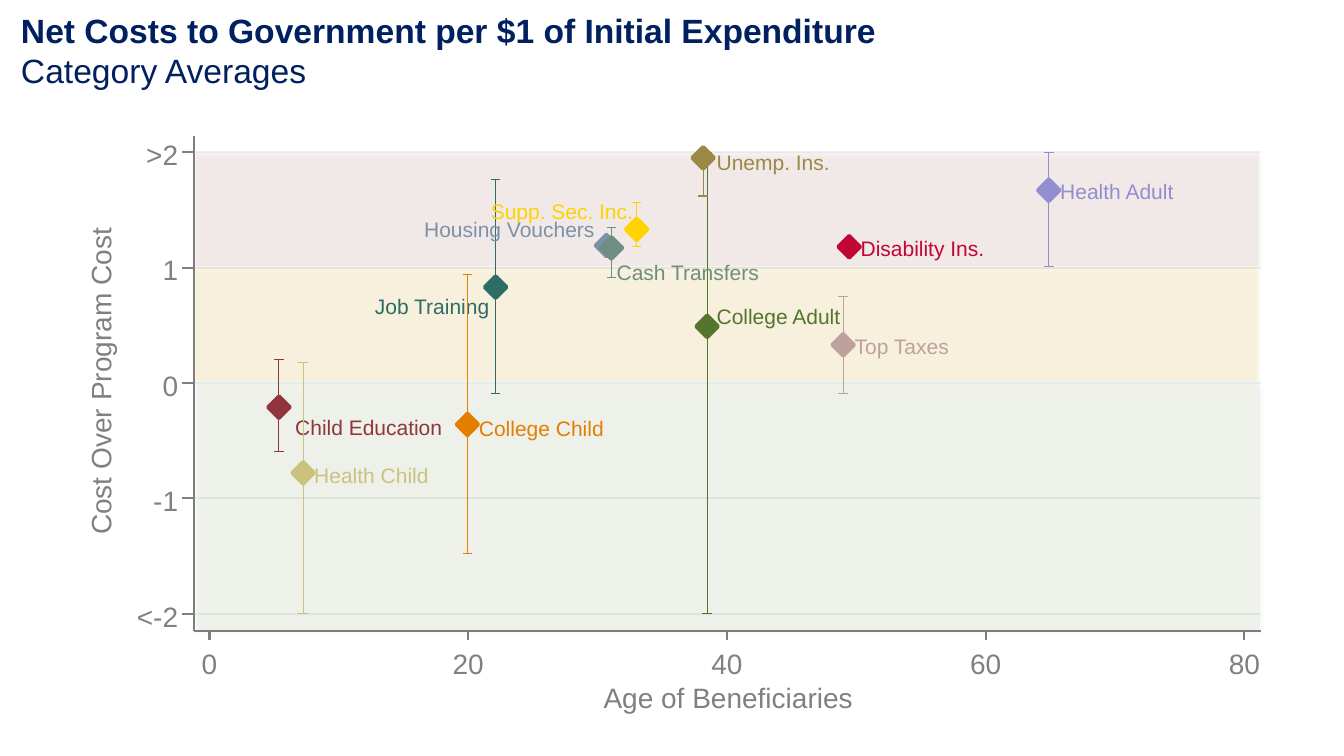
"""Build the slide of net government costs by age of beneficiaries."""
from lxml import etree
from pptx import Presentation
from pptx import util as u
from pptx.dml import color
from pptx.enum import shapes, text
from pptx.oxml import ns


class Theme:
    font = "Arial"
    title, axis, label = 24, 20, 15
    navy, gray, grid = "002060", "808080", "EAF2F3"
    green, red, amber = "AFC97A", "CD7371", "FFC000"
    hues = {
        "College Adult": "55752F",
        "Job Training": "2D6D66",
        "Child Education": "90353B",
        "Health Child": "CAC27E",
        "Disability Ins.": "C10534",
        "Health Adult": "938DD2",
        "Top Taxes": "BFA19C",
        "Unemp. Ins.": "9C8847",
        "Supp. Sec. Inc.": "FFD200",
        "Housing Vouchers": "7B92A8",
        "Cash Transfers": "6E8E84",
        "College Child": "E37E00",
    }


deck = Presentation()
deck.slide_width, deck.slide_height = u.Cm(33.87), u.Cm(19.05)
slide = deck.slides.add_slide(deck.slide_layouts[6])
draw = slide.shapes


def write(words, x, y, wide, high=0.99, size=Theme.axis, hue=Theme.gray,
          align=text.PP_ALIGN.LEFT, bold=0, turn=0):
    """Write lines of text, the first few of them bold."""
    box = draw.add_textbox(u.Cm(x), u.Cm(y), u.Cm(wide), u.Cm(high))
    box.rotation = turn
    frame = box.text_frame
    frame.word_wrap = True
    frame.margin_left = frame.margin_right = 0
    frame.margin_top = frame.margin_bottom = 0
    frame.text = words
    for row, para in enumerate(frame.paragraphs):
        para.alignment = align
        font = para.runs[0].font
        font.name, font.size, font.bold = Theme.font, u.Pt(size), row < bold
        font.color.rgb = color.RGBColor.from_string(hue)


def rule(x1, y1, x2, y2, hue, weight=1.5):
    """Draw a straight line without a shadow."""
    line = draw.add_connector(shapes.MSO_CONNECTOR.STRAIGHT,
                              u.Cm(x1), u.Cm(y1), u.Cm(x2), u.Cm(y2))
    line.line.color.rgb = color.RGBColor.from_string(hue)
    line.line.width = u.Pt(weight)
    etree.SubElement(line._element.spPr, ns.qn("a:effectLst"))


left, right, top, base = 4.88, 31.78, 3.43, 15.9
zero_x, year = 5.28, 0.326
zero_y, unit = 9.65, 2.908

ticks = {-2: "<-2", -1: "-1", 0: "0", 1: "1", 2: ">2"}
for cost in ticks:
    y = zero_y - cost * unit
    rule(left, y, right, y, Theme.grid)

rule(left, base, left, top, Theme.gray)
for cost, name in ticks.items():
    y = zero_y - cost * unit
    rule(left, y, left - 0.28, y, Theme.gray)
    write(name, 3.12, y - 0.37, 1.37, align=text.PP_ALIGN.RIGHT)
write("Cost Over Program Cost", -1.47, 8.92, 8.13, turn=270)

rule(left, base, right, base, Theme.gray)
for age in range(0, 81, 20):
    x = zero_x + age * year
    rule(x, base, x, base + 0.23, Theme.gray)
    write(str(age), x - 0.56, 16.28, 1.12, align=text.PP_ALIGN.CENTER)
write("Age of Beneficiaries", 15.21, 17.15, 6.65)

write("Net Costs to Government per $1 of Initial Expenditure\nCategory Averages",
      0.53, 0.25, 30.18, 2.06, size=Theme.title, hue=Theme.navy, bold=1)

bands = [
    (Theme.green, 4.95, 9.68, 6.2),
    (Theme.red, 4.93, 3.84, 2.87),
    (Theme.amber, 4.9, 6.73, 2.87),
]
for hue, x, y, high in bands:
    band = draw.add_shape(shapes.MSO_SHAPE.RECTANGLE,
                          u.Cm(x), u.Cm(y), u.Cm(26.8), u.Cm(high))
    band.fill.solid()
    band.fill.fore_color.rgb = color.RGBColor.from_string(hue)
    band.line.fill.background()
    band.shadow.inherit = False
    props = band._element.spPr
    tint = props.find(ns.qn("a:solidFill"))[0]
    etree.SubElement(tint, ns.qn("a:alpha"), val="10000")
    shade = etree.SubElement(props.find(ns.qn("a:effectLst")), ns.qn("a:outerShdw"),
                             blurRad="38100", dist="22860", dir="5400000", rotWithShape="0")
    black = etree.SubElement(shade, ns.qn("a:srgbClr"), val="000000")
    etree.SubElement(black, ns.qn("a:alpha"), val="35000")

points = [
    ("College Adult", 38.47, 0.49, -2, 2, 18.06, 7.65, 3.56),
    ("Job Training", 22.12, 0.83, -0.09, 1.76, 9.45, 7.39, 3.3),
    ("Child Education", 5.37, -0.21, -0.59, 0.2, 7.44, 10.44, 4.11),
    ("Health Child", 7.24, -0.78, -2, 0.18, 7.92, 11.66, 3.25),
    ("Disability Ins.", 49.45, 1.18, 1.14, 1.22, 21.69, 5.94, 3.53),
    ("Health Adult", 64.88, 1.67, 1.01, 2, 26.72, 4.5, 3.25),
    ("Top Taxes", 48.99, 0.33, -0.09, 0.75, 21.54, 8.41, 2.84),
    ("Unemp. Ins.", 38.16, 1.95, 1.62, 2, 18.06, 3.78, 3.25),
    ("Supp. Sec. Inc.", 33.02, 1.33, 1.18, 1.56, 12.37, 5, 3.99),
    ("Housing Vouchers", 30.69, 1.19, 1.13, 1.24, 10.69, 5.46, 4.78),
    ("Cash Transfers", 31.07, 1.17, 0.91, 1.35, 15.54, 6.55, 4.04),
    ("College Child", 19.94, -0.36, -1.48, 0.94, 12.07, 10.46, 3.56),
]
side, cap = 0.56, 0.12
for name, age, cost, low, high, text_x, text_y, wide in points:
    hue = Theme.hues[name]
    x, y = zero_x + age * year, zero_y - cost * unit
    ends = [zero_y - bound * unit for bound in (low, high)]
    rule(x, ends[0], x, ends[1], hue, 0.75)
    for end in ends:
        rule(x - cap, end, x + cap, end, hue, 0.75)
    mark = draw.add_shape(shapes.MSO_SHAPE.DIAMOND, u.Cm(x - side / 2),
                          u.Cm(y - side / 2), u.Cm(side), u.Cm(side))
    mark.shadow.inherit = False
    mark.fill.solid()
    mark.fill.fore_color.rgb = color.RGBColor.from_string(hue)
    mark.line.color.rgb = color.RGBColor.from_string(hue)
    mark.line.width = u.Pt(2.5)
    write(name, text_x, text_y, wide, 0.76, size=Theme.label, hue=hue)

deck.save("out.pptx")
